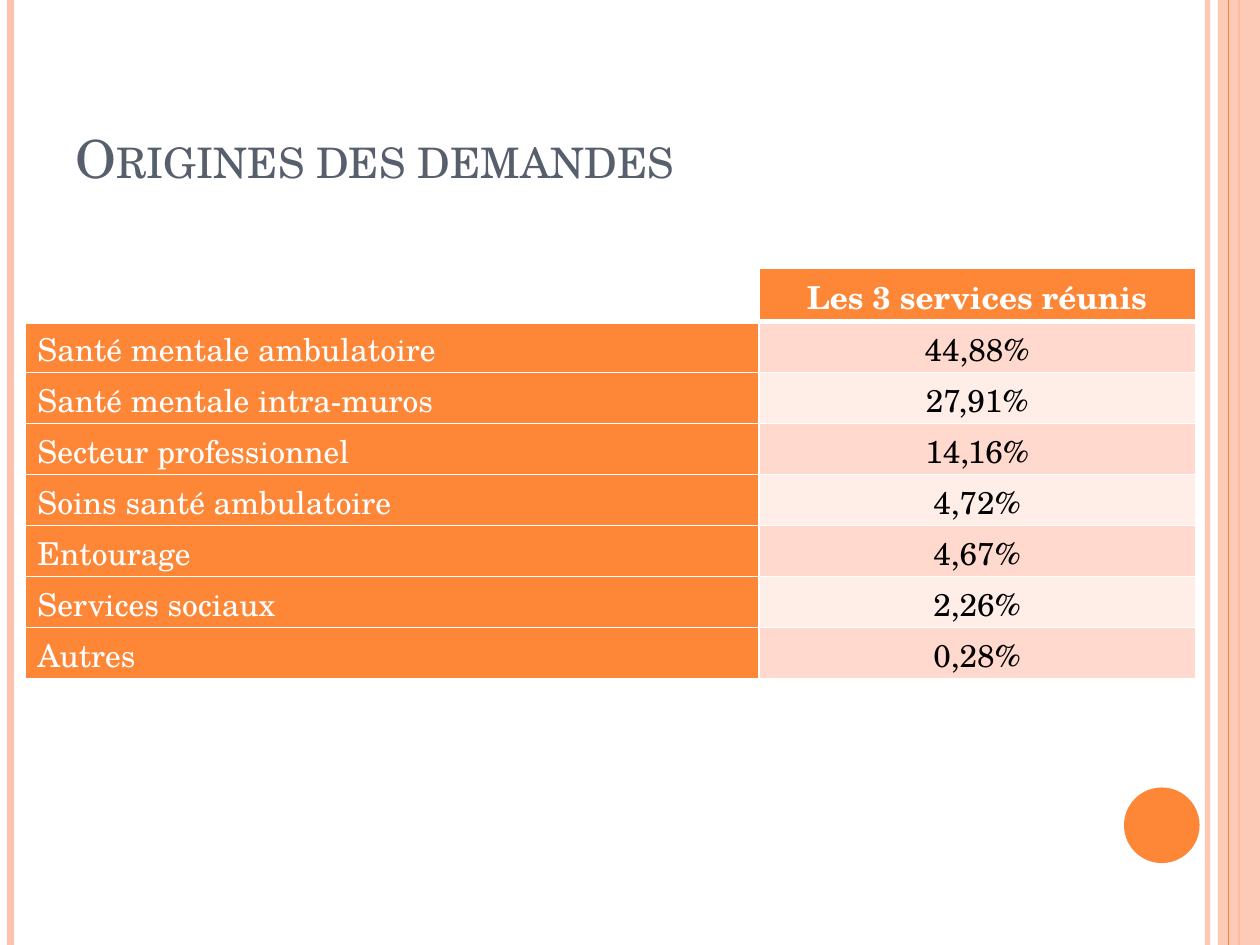
from lxml.etree import SubElement
from pptx import Presentation
from pptx.dml.color import RGBColor
from pptx.enum.shapes import MSO_CONNECTOR, MSO_SHAPE
from pptx.enum.text import MSO_ANCHOR, PP_ALIGN
from pptx.oxml.ns import qn
from pptx.util import Pt

FONT = "TeX Gyre Schola"
COLORS = {
    "orange": "FE8637",
    "salmon": "FEC3AE",
    "band_dark": "FFD9CE",
    "band_light": "FFEDE8",
    "title": "575F6D",
    "white": "FFFFFF",
    "black": "000000",
}
HEADER = ("", "Les 3 services réunis")
ORIGINS = [
    ("Santé mentale ambulatoire", "44,88%"),
    ("Santé mentale intra-muros", "27,91%"),
    ("Secteur professionnel", "14,16%"),
    ("Soins santé ambulatoire", "4,72%"),
    ("Entourage", "4,67%"),
    ("Services sociaux", "2,26%"),
    ("Autres", "0,28%"),
]


def color(name):
    return RGBColor.from_string(COLORS[name])


def style_font(font, size, color_name, bold=False):
    font.name = FONT
    font.size = Pt(size)
    font.bold = bold
    font.color.rgb = color(color_name)


def set_opacity(shape, percent):
    """Apply opacity to the first solid colour of a shape or line."""
    solid = next(shape._element.spPr.iter(qn("a:srgbClr")))
    SubElement(solid, qn("a:alpha"), val=str(percent * 1000))


def add_stripe(page, x, top, height, width, color_name):
    stripe = page.shapes.add_connector(
        MSO_CONNECTOR.STRAIGHT, Pt(x), Pt(top), Pt(x), Pt(top + height))
    stripe.line.color.rgb = color(color_name)
    stripe.line.width = Pt(width)
    SubElement(stripe._element.spPr, qn("a:effectLst"))
    return stripe


def add_solid(page, kind, left, top, width, height, color_name):
    shape = page.shapes.add_shape(kind, Pt(left), Pt(top), Pt(width), Pt(height))
    shape.shadow.inherit = False
    shape.fill.solid()
    shape.fill.fore_color.rgb = color(color_name)
    shape.line.fill.background()
    return shape


def add_frame(page, left, top, width, height):
    """Draw the vertical stripes and the disc along the page edges."""
    right = left + width
    set_opacity(add_stripe(page, right - 30, top, height, 3, "salmon"), 93)
    add_stripe(page, left + 6, top, height, 4.5, "salmon")
    add_stripe(page, right - 12, top, height, 1.5, "orange")
    band = add_solid(page, MSO_SHAPE.RECTANGLE, right - 24, top, 24, height, "salmon")
    set_opacity(band, 87)
    add_stripe(page, right - 18, top, height, 0.75, "orange")
    add_solid(page, MSO_SHAPE.OVAL, right - 77.7, top + 450, 43.2, 43.2, "orange")


def add_title(page, left, top, width, height):
    title = page.shapes.title
    title.left, title.top = Pt(left), Pt(top)
    title.width, title.height = Pt(width), Pt(height)
    title.text_frame.vertical_anchor = MSO_ANCHOR.BOTTOM
    para = title.text_frame.paragraphs[0]
    para.alignment = PP_ALIGN.LEFT
    style_font(para.font, 30, "title")
    span = para.add_run()
    span.text = "Origines des demandes"
    span._r.get_or_add_rPr().set("cap", "small")


def set_borders(cell, widths):
    properties = cell._tc.get_or_add_tcPr()
    for side, width in widths.items():
        line = SubElement(properties, qn(f"a:ln{side}"), w=str(Pt(width)))
        fill = SubElement(line, qn("a:solidFill"))
        SubElement(fill, qn("a:srgbClr"), val=COLORS["white"])


def fill_cell(cell, text, row, column):
    is_header, is_value = row == 0, column == 1
    set_borders(cell, {"L": 1, "R": 1, "T": 3 if row == 1 else 1,
                       "B": 3 if is_header else 1})
    if is_header:
        fill_name = "orange" if is_value else "white"
    elif is_value:
        fill_name = "band_dark" if row % 2 else "band_light"
    else:
        fill_name = "orange"
    cell.fill.solid()
    cell.fill.fore_color.rgb = color(fill_name)
    cell.margin_top, cell.margin_bottom = Pt(2.6), Pt(0)
    cell.vertical_anchor = MSO_ANCHOR.MIDDLE if is_value else MSO_ANCHOR.TOP
    para = cell.text_frame.paragraphs[0]
    para.text = text
    para.alignment = PP_ALIGN.CENTER if is_value else PP_ALIGN.LEFT
    text_color = "black" if is_value and not is_header else "white"
    style_font(para.font, 18, text_color, bold=is_header)


def add_origins_table(page, left, top, width, height):
    rows = [HEADER, *ORIGINS]
    table = page.shapes.add_table(
        len(rows), 2, Pt(left), Pt(top), Pt(width), Pt(height)).table
    label_width = 419.5
    table.columns[0].width = Pt(label_width)
    table.columns[1].width = Pt(width - label_width)
    for row, texts in enumerate(rows):
        table.rows[row].height = Pt(height / len(rows))
        for column, text in enumerate(texts):
            fill_cell(table.cell(row, column), text, row, column)


def main():
    deck = Presentation()
    deck.slide_width, deck.slide_height = Pt(720), Pt(540)
    page = deck.slides.add_slide(deck.slide_layouts[5])
    add_frame(page, 0, 0, 720, 540)
    add_title(page, 36, 21.6, 588, 90)
    add_origins_table(page, 14.2, 153.2, 668.9, 233.3)
    deck.save("out.pptx")


if __name__ == "__main__":
    main()
